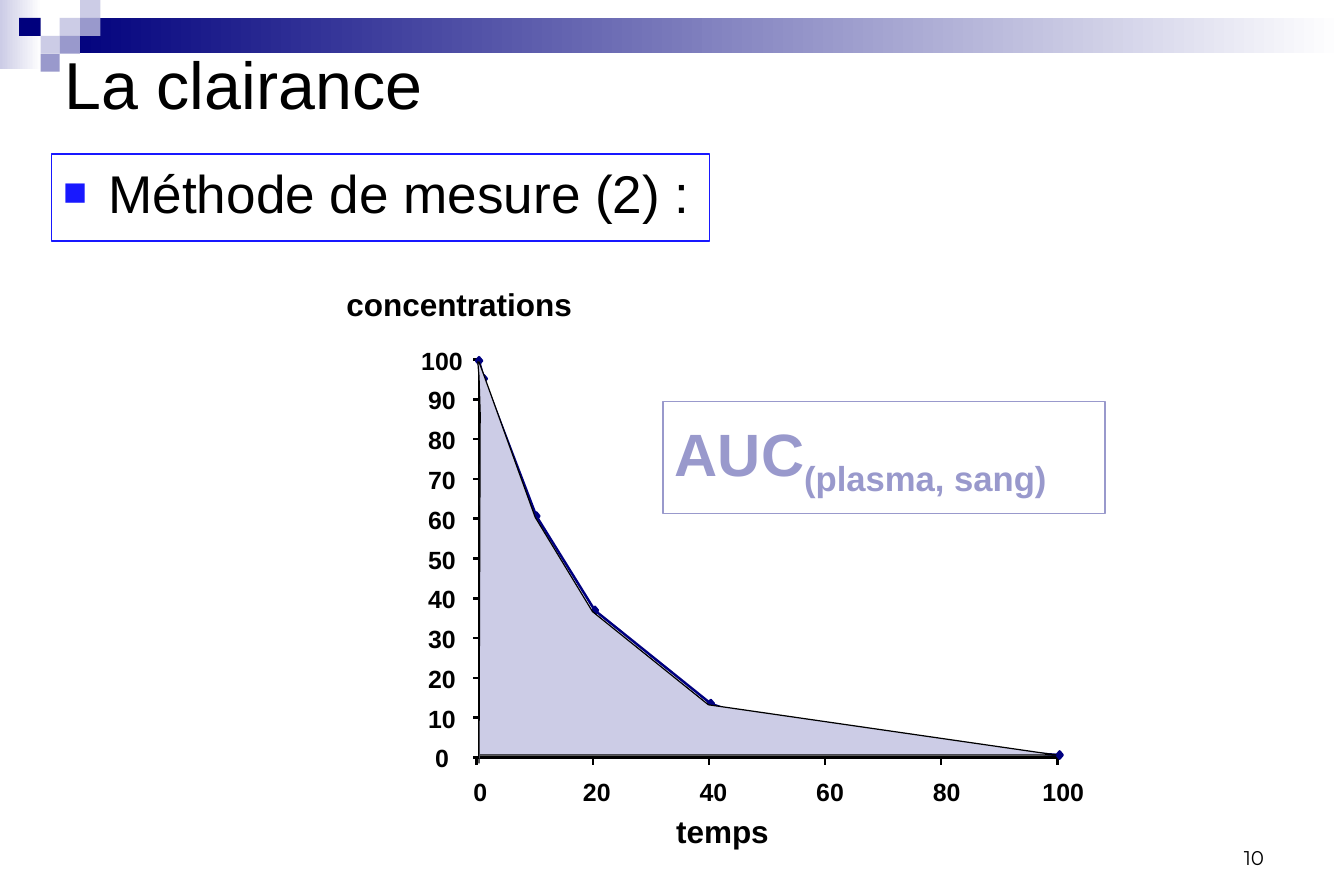
import pptx
import pptx.util
import pptx.dml.color
import pptx.enum.shapes
import pptx.enum.text
import pptx.oxml
import pptx.oxml.ns
import lxml.etree

Inches = pptx.util.Inches
Pt = pptx.util.Pt
RGB = pptx.dml.color.RGBColor.from_string
ALIGN = pptx.enum.text.PP_ALIGN
ANCHOR = pptx.enum.text.MSO_ANCHOR
RECTANGLE = pptx.enum.shapes.MSO_SHAPE.RECTANGLE
qn = pptx.oxml.ns.qn

COLORS = {"black": "000000", "white": "FFFFFF", "navy": "00007D", "curve": "000080",
          "pale": "CCCCE6", "lilac": "9999CC", "blue": "1818FF"}

deck = pptx.Presentation()
deck.slide_width, deck.slide_height = Inches(11.25), Inches(7.5)
page = deck.slides.add_slide(deck.slide_layouts[6])


def write(box, text, size, color="black", bold=False, font="Arial", align=ALIGN.LEFT,
          anchor=ANCHOR.TOP, inset=0.1):
    """Fill a box with one formatted paragraph and return the paragraph."""
    layout = {"word_wrap": True, "vertical_anchor": anchor,
              "margin_left": Inches(inset), "margin_right": Inches(inset),
              "margin_top": Inches(inset / 2), "margin_bottom": Inches(inset / 2)}
    for name, value in layout.items():
        setattr(box.text_frame, name, value)
    para = box.text_frame.paragraphs[0]
    para.alignment = align
    span = para.add_run()
    span.text = text
    for name, value in {"size": Pt(size), "bold": bold, "name": font}.items():
        setattr(span.font, name, value)
    span.font.color.rgb = RGB(COLORS[color])
    return para


def outline(points, fill, line, width, close):
    """Draw a freeform through points given in inches."""
    corners = [(Inches(x), Inches(y)) for x, y in points]
    builder = page.shapes.build_freeform(*corners[0], scale=1.0)
    builder.add_line_segments(corners[1:], close=close)
    shape = builder.convert_to_shape()
    shape.shadow.inherit = False
    if fill:
        shape.fill.solid()
        shape.fill.fore_color.rgb = RGB(COLORS[fill])
    else:
        shape.fill.background()
    shape.line.color.rgb = RGB(COLORS[line])
    shape.line.width = Pt(width)


# Banner: gradient bars, then the small tiles
banner = [
    (0, 0, 0.35, 0.58, "pale", "white"),
    (0.51, 0.15, 10.74, 0.29, "navy", "white"),
    (0.5, 0.15, 0.17, 0.15, "pale", None),
    (0.67, 0, 0.17, 0.15, "pale", None),
    (0.67, 0.15, 0.17, 0.15, "lilac", None),
    (0.34, 0.3, 0.16, 0.15, "pale", None),
    (0.16, 0.15, 0.18, 0.15, "navy", None),
    (0.5, 0.3, 0.17, 0.15, "lilac", None),
    (0.34, 0.45, 0.16, 0.15, "lilac", None),
]
for left, top, width, height, start, end in banner:
    tile = page.shapes.add_shape(RECTANGLE, Inches(left), Inches(top), Inches(width), Inches(height))
    tile.shadow.inherit = False
    tile.line.fill.background()
    if end:
        tile.fill.gradient()
        tile.fill.gradient_angle = 0
        for stop, color in zip(tile.fill.gradient_stops, (start, end)):
            stop.color.rgb = RGB(COLORS[color])
    else:
        tile.fill.solid()
        tile.fill.fore_color.rgb = RGB(COLORS[start])

# Axes and ticks
AXIS_X, AXIS_TOP, AXIS_Y, AXIS_END = 4.01, 3.01, 6.34, 8.87
STEP_Y, STEP_X = (AXIS_Y - AXIS_TOP) / 10, 0.972
axis_lines = [(AXIS_X, AXIS_TOP, AXIS_X, AXIS_Y), (AXIS_X, AXIS_Y, AXIS_END, AXIS_Y)]
for i in range(11):
    y = AXIS_Y - i * STEP_Y
    axis_lines.append((3.96, y, AXIS_X, y))
for i in range(6):
    x = 3.99 + i * STEP_X
    axis_lines.append((x, 6.4, x, AXIS_Y))
for ends in axis_lines:
    line = page.shapes.add_connector(pptx.enum.shapes.MSO_CONNECTOR.STRAIGHT, *map(Inches, ends))
    line.line.color.rgb = RGB(COLORS["black"])
    line.line.width = Pt(1.5)
    lxml.etree.SubElement(line._element.spPr, qn("a:effectLst"))

# Concentration curve with diamond markers
curve = [(4.01, 3.02), (4.05, 3.17), (4.49, 4.32), (4.98, 5.11),
         (5.95, 5.89), (6.44, 6.07), (7.41, 6.23), (8.87, 6.32)]
outline(curve, None, "curve", 1.5, False)
for x, y in curve:
    diamond = [(x, y - 0.03), (x + 0.025, y), (x, y + 0.03), (x - 0.025, y)]
    outline(diamond, "curve", "curve", 1.5, True)

# Axis labels
labels = [(3.7, 6.22 - i * STEP_Y, i * 10) for i in range(11)]
labels += [(4.02 + i * 0.976, 6.5, i * 20) for i in range(6)]
for center, top, value in labels:
    box = page.shapes.add_textbox(Inches(center - 0.2), Inches(top), Inches(0.4), Inches(0.25))
    write(box, str(value), 15, bold=True, align=ALIGN.CENTER, inset=0)

# Area under the curve
area = [(4.01, 6.39), (4.02, 3.46), (4.01, 3.15), (4, 3.03), (4.01, 3.03), (4.04, 3.11),
        (4.48, 4.33), (4.96, 5.12), (5.93, 5.9), (8.84, 6.32), (4.02, 6.32)]
outline(area, "pale", "black", 0.75, False)

# Title, axis titles and page number
texts = [
    ("La clairance", 0.43, 0.36, 9.78, 0.67, {"size": 40, "anchor": ANCHOR.MIDDLE, "inset": 0.11}),
    ("concentrations", 2.79, 2.33, 2.2, 0.42, {"size": 19, "bold": True, "inset": 0.11}),
    ("temps", 5.55, 6.74, 1.1, 0.42, {"size": 19, "bold": True, "inset": 0.11}),
    ("10", 8.06, 6.83, 2.62, 0.5,
     {"size": 12, "font": "Montserrat", "align": ALIGN.RIGHT, "anchor": ANCHOR.BOTTOM}),
]
for text, left, top, width, height, style in texts:
    box = page.shapes.add_textbox(Inches(left), Inches(top), Inches(width), Inches(height))
    write(box, text, **style)

# Framed texts: method heading and AUC
frames = [
    ("Méthode de mesure (2) :", 0.43, 1.29, 5.51, 0.73, "blue", {"size": 32}),
    ("AUC", 5.55, 3.36, 3.7, 0.94, "lilac",
     {"size": 36, "color": "lilac", "bold": True, "anchor": ANCHOR.MIDDLE}),
]
framed = []
for text, left, top, width, height, color, style in frames:
    frame = page.shapes.add_shape(RECTANGLE, Inches(left), Inches(top), Inches(width), Inches(height))
    frame.shadow.inherit = False
    frame.fill.background()
    frame.line.color.rgb = RGB(COLORS[color])
    frame.line.width = Pt(1)
    para = write(frame, text, **style)
    properties = para._p.get_or_add_pPr()
    properties.set("marL", str(Inches(0.38)))
    properties.set("indent", str(Inches(-0.38)))
    spacing = lxml.etree.SubElement(properties, qn("a:spcBef"))
    lxml.etree.SubElement(spacing, qn("a:spcPct"), val="20000")
    framed.append(para)
heading, auc = framed

# Square bullet of the heading
properties = heading._p.get_or_add_pPr()
bullet_color = lxml.etree.SubElement(properties, qn("a:buClr"))
lxml.etree.SubElement(bullet_color, qn("a:srgbClr"), val=COLORS["blue"])
lxml.etree.SubElement(properties, qn("a:buSzPct"), val="75000")
lxml.etree.SubElement(properties, qn("a:buFont"), typeface="Arial")
lxml.etree.SubElement(properties, qn("a:buChar"), char="■")

# Subscript after AUC
span = auc.add_run()
span.text = "(plasma, sang)"
for name, value in {"size": Pt(36), "bold": True, "name": "Arial"}.items():
    setattr(span.font, name, value)
span.font.color.rgb = RGB(COLORS["lilac"])
span._r.get_or_add_rPr().set("baseline", "-25000")

deck.save("out.pptx")
